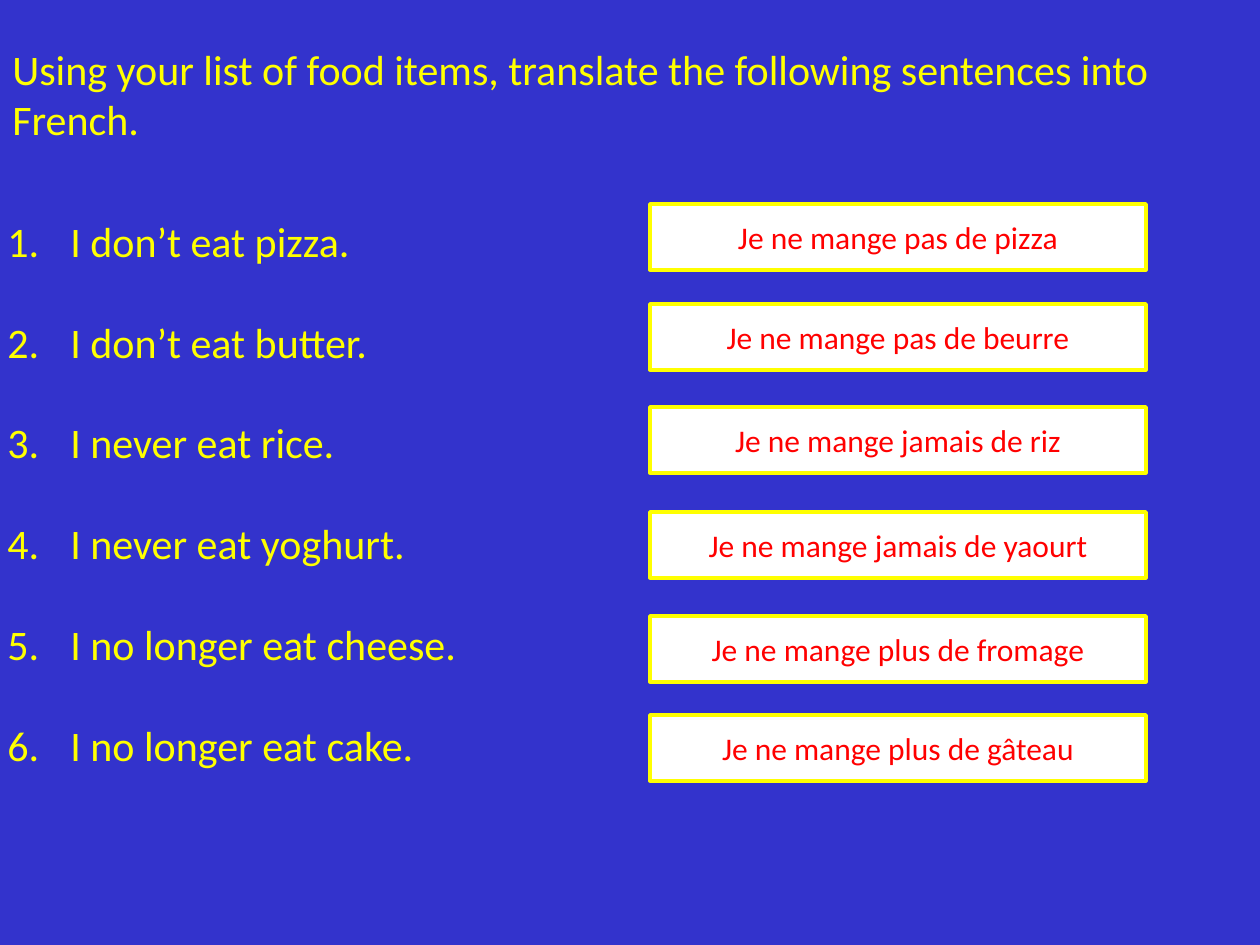
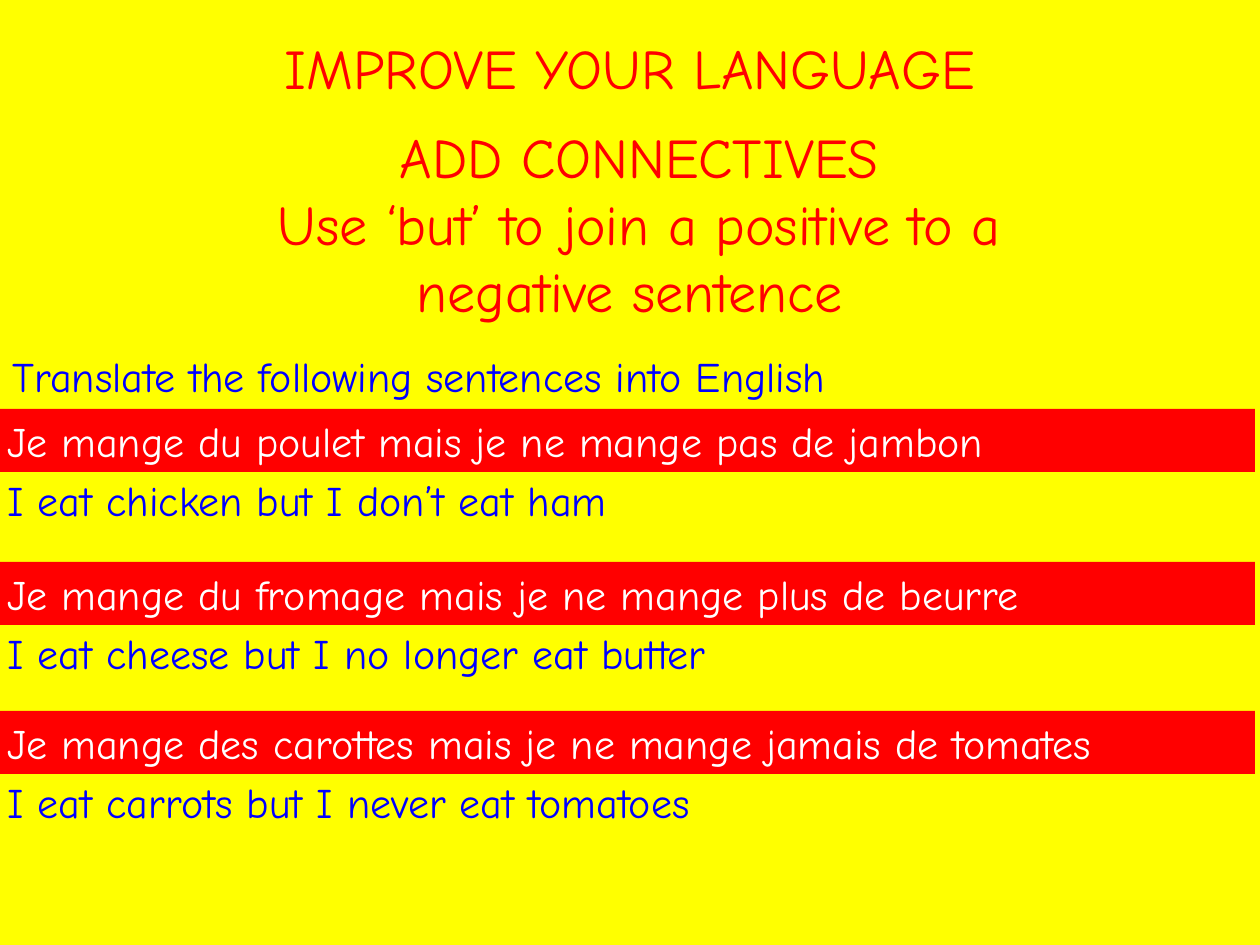
import pptx
import pptx.util
import pptx.dml.color
import pptx.enum.shapes
import pptx.enum.text
import pptx.oxml.ns
from lxml import etree

SCALE = 914400 / 126
WIDE, HIGH = 1260, 945
COLORS = {"blue": "3333CC", "ink": "0000FF", "yellow": "FFFF00", "red": "FF0000", "white": "FFFFFF"}
ALIGN = pptx.enum.text.PP_ALIGN
ANCHOR = pptx.enum.text.MSO_ANCHOR
FIT = pptx.enum.text.MSO_AUTO_SIZE

LEFT = -5
PAIRS = [
    (204, "I don’t eat pizza.", "Je ne mange pas de pizza"),
    (304, "I don’t eat butter.", "Je ne mange pas de beurre"),
    (407, "I never eat rice.", "Je ne mange jamais de riz"),
    (512, "I never eat yoghurt.", "Je ne mange jamais de yaourt"),
    (616, "I no longer eat cheese.", "Je ne mange plus de fromage"),
    (715, "I no longer eat cake.", "Je ne mange plus de gâteau"),
]
BANDS = [
    (409, "Je mange du poulet mais je ne mange pas de jambon", "I eat chicken but I don’t eat ham"),
    (562, "Je mange du fromage mais je ne mange plus de beurre", "I eat cheese but I no longer eat butter"),
    (711, "Je mange des carottes mais je ne mange jamais de tomates", "I eat carrots but I never eat tomatoes"),
]


def px(count):
    return pptx.util.Emu(round(count * SCALE))


def paint(name):
    return pptx.dml.color.RGBColor.from_string(COLORS[name])


def write(frame, text, font, size=24, color="yellow", align=ALIGN.LEFT,
          anchor=ANCHOR.TOP, grow=True, gap=0, number=False):
    frame.word_wrap = True
    frame.vertical_anchor = anchor
    frame.auto_size = FIT.SHAPE_TO_FIT_TEXT if grow else FIT.NONE
    for i, line in enumerate(text.split("\n")):
        para = frame.paragraphs[0] if i == 0 else frame.add_paragraph()
        para.alignment = align
        para.space_after = pptx.util.Pt(gap)
        run = para.add_run()
        run.text = line
        run.font.name = font
        run.font.size = pptx.util.Pt(size)
        run.font.color.rgb = paint(color)
        if number:
            props = para._p.get_or_add_pPr()
            props.set("marL", str(px(63)))
            props.set("indent", str(-px(63)))
            etree.SubElement(props, pptx.oxml.ns.qn("a:buAutoNum"), type="arabicPeriod")


class Deck:
    """Holds the deck, its font and the current slide."""

    def __init__(self):
        self.file = pptx.Presentation()
        self.file.slide_width, self.file.slide_height = px(WIDE), px(HIGH)

    def page(self, back, font):
        self.font = font
        self.slide = self.file.slides.add_slide(self.file.slide_layouts[6])
        fill = self.slide.background.fill
        fill.solid()
        fill.fore_color.rgb = paint(back)

    def label(self, text, x, y, w, h, **style):
        box = self.slide.shapes.add_textbox(px(x), px(y), px(w), px(h))
        write(box.text_frame, text, self.font, **style)

    def block(self, text, x, y, w, h, fill, edge=None, **style):
        kind = pptx.enum.shapes.MSO_SHAPE.RECTANGLE
        box = self.slide.shapes.add_shape(kind, px(x), px(y), px(w), px(h))
        box.shadow.inherit = False
        box.fill.solid()
        box.fill.fore_color.rgb = paint(fill)
        if edge:
            box.line.color.rgb = paint(edge)
            box.line.width = pptx.util.Pt(2)
        else:
            box.line.fill.background()
        write(box.text_frame, text, self.font, **style)


def drill(deck):
    deck.page("blue", "Calibri")
    deck.label("Using your list of food items, translate the following sentences into French.",
               0, 37, WIDE, 115)
    deck.label("\n".join(task for _, task, _ in PAIRS), LEFT, 209, WIDE, 572, gap=28.8, number=True)
    for y, _, reply in PAIRS:
        deck.block(reply, 650, y, 496, 66, "white", edge="yellow", size=18, color="red",
                   align=ALIGN.CENTER, anchor=ANCHOR.MIDDLE, grow=False)


def join(deck):
    deck.page("yellow", "Comic Neue")
    head = dict(size=32, color="red", align=ALIGN.CENTER)
    deck.label("IMPROVE YOUR LANGUAGE ", 223, 27, 833, 81, **head)
    deck.label("ADD CONNECTIVES\nUse ‘but’ to join a positive to a negative sentence ",
               223, 116, 833, 217, **head)
    deck.label("Translate the following sentences into English", 0, 344, WIDE, 63, color="ink")
    for y, french, reply in BANDS:
        deck.block(french, LEFT, y, WIDE, 63, "red", color="white")
        deck.label(reply, LEFT, y + 59, WIDE, 63, color="ink")


def main():
    deck = Deck()
    drill(deck)
    join(deck)
    deck.file.save("out.pptx")


if __name__ == "__main__":
    main()
